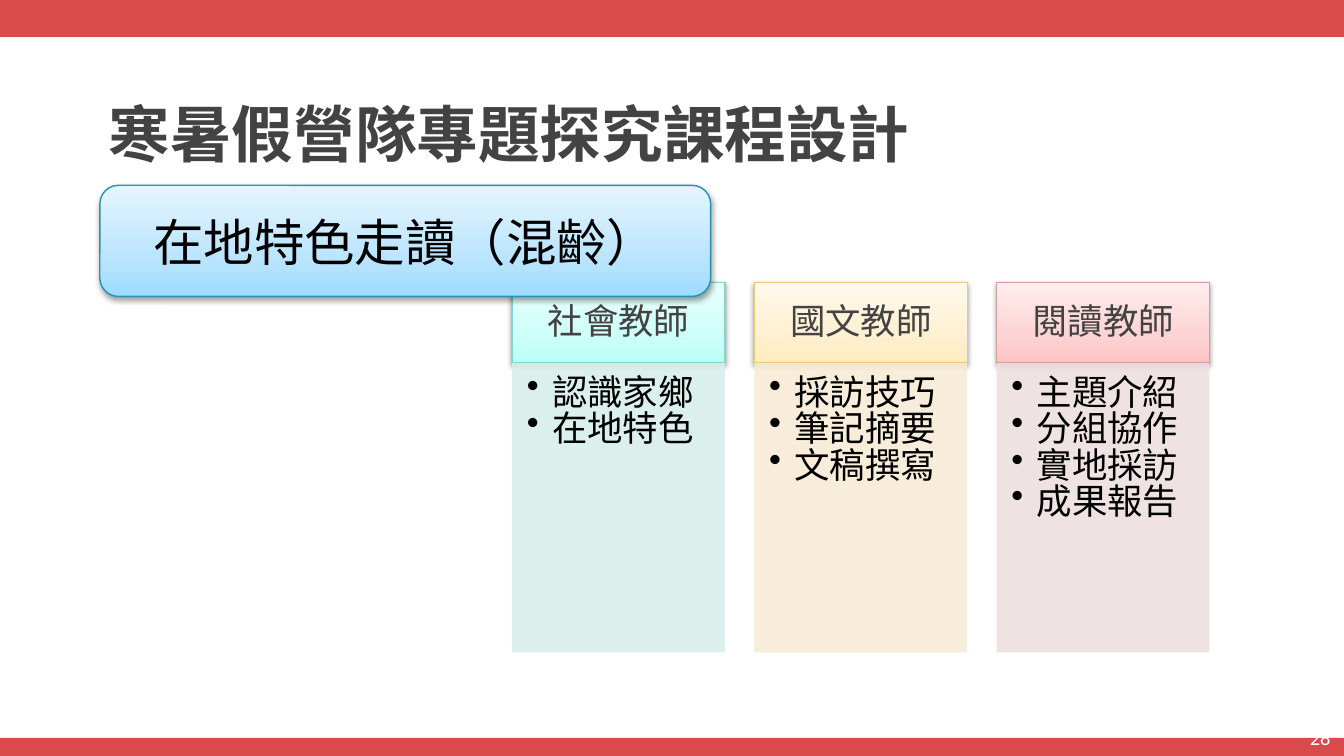
from dataclasses import dataclass

from lxml.etree import SubElement
from pptx import Presentation
from pptx.dml.color import RGBColor
from pptx.enum.shapes import MSO_SHAPE
from pptx.enum.text import MSO_ANCHOR, MSO_AUTO_SIZE, PP_ALIGN
from pptx.oxml.ns import qn
from pptx.util import Pt


@dataclass(frozen=True)
class Theme:
    bar: str = "DA4A4A"
    heading: str = "434343"
    ink: str = "000000"
    paper: str = "FFFFFF"
    topic_line: str = "2693B6"
    topic_stops: tuple = ("9EDBFF", "BBE5FE", "E5F5FF")
    column_font: str = "Noto Sans CJK SC"
    topic_font: str = "Noto Sans CJK TC"
    number_font: str = "Calibri"
    title_size: float = 33
    topic_size: float = 27
    column_size: float = 19
    number_size: float = 11


@dataclass(frozen=True)
class Column:
    teacher: str
    lessons: tuple
    stops: tuple
    line: str
    panel: str


COLUMNS = (
    Column("社會教師", ("認識家鄉", "在地特色"),
           ("B9FFF6", "CDFFF8", "ECFFFC"), "80D5CC", "D8EFEC"),
    Column("國文教師", ("採訪技巧", "筆記摘要", "文稿撰寫"),
           ("FFEBBF", "FFF0D1", "FFF9ED"), "E9CB74", "F7ECD6"),
    Column("閱讀教師", ("主題介紹", "分組協作", "實地採訪", "成果報告"),
           ("FDC2C2", "FDD4D4", "FFEDED"), "D19E9E", "EEDFDF"),
)


def add_element(parent, tag, **attributes):
    values = {name: str(value) for name, value in attributes.items()}
    return SubElement(parent, qn(tag), values)


def write_text(shape, lines, *, font, size, color, bold=False, align=PP_ALIGN.LEFT,
               anchor=MSO_ANCHOR.TOP, insets=(7.2, 3.6, 7.2, 3.6),
               spacing=1.0, after=0, bullet_indent=0):
    frame = shape.text_frame
    frame.word_wrap = True
    frame.auto_size = MSO_AUTO_SIZE.NONE
    frame.vertical_anchor = anchor
    frame.margin_left, frame.margin_top, frame.margin_right, frame.margin_bottom = map(Pt, insets)
    frame.text = "\n".join(lines)
    for paragraph in frame.paragraphs:
        paragraph.alignment = align
        paragraph.line_spacing = spacing
        paragraph.space_before = Pt(0)
        paragraph.space_after = Pt(after)
        if bullet_indent:
            paragraph.level = 1
            properties = paragraph._p.get_or_add_pPr()
            properties.set("marL", str(Pt(bullet_indent)))
            properties.set("indent", str(-Pt(bullet_indent)))
            add_element(properties, "a:buChar", char="•")
        for run in paragraph.runs:
            run.font.size = Pt(size)
            run.font.bold = bold
            run.font.color.rgb = RGBColor.from_string(color)
            run.font.name = font
            add_element(run._r.get_or_add_rPr(), "a:ea", typeface=font)


class SlideBuilder:
    def __init__(self, presentation, theme):
        self.theme = theme
        self.slide = presentation.slides.add_slide(presentation.slide_layouts[5])

    def title(self, text, left, top, width, height):
        shape = self.slide.shapes.title
        shape.left, shape.top, shape.width, shape.height = map(Pt, (left, top, width, height))
        write_text(shape, [text], font=self.theme.column_font, size=self.theme.title_size,
                   color=self.theme.heading, bold=True, anchor=MSO_ANCHOR.MIDDLE,
                   insets=(5, 2.9, 5, 2.9), spacing=0.9)

    def block(self, left, top, width, height, color, opacity=100):
        shape = self.slide.shapes.add_shape(
            MSO_SHAPE.RECTANGLE, *map(Pt, (left, top, width, height)))
        shape.shadow.inherit = False
        shape.fill.solid()
        shape.fill.fore_color.rgb = RGBColor.from_string(color)
        if opacity < 100:
            for value in shape.element.spPr.iter(qn("a:srgbClr")):
                add_element(value, "a:alpha", val=opacity * 1000)
        shape.line.fill.background()
        return shape

    def gradient_card(self, kind, left, top, width, height, stops, line):
        shape = self.slide.shapes.add_shape(kind, *map(Pt, (left, top, width, height)))
        shape.fill.gradient()
        shape.fill.gradient_angle = 90
        stop_list = shape.element.spPr.find(".//" + qn("a:gsLst"))
        stop_list.clear()
        for position, color in zip((0, 35, 100), stops):
            stop = add_element(stop_list, "a:gs", pos=position * 1000)
            add_element(stop, "a:srgbClr", val=color)
        shape.line.color.rgb = RGBColor.from_string(line)
        shape.line.width = Pt(0.75)
        shape.shadow.inherit = False
        effects = shape.element.spPr.find(qn("a:effectLst"))
        shadow = add_element(effects, "a:outerShdw", blurRad=Pt(3.1), dist=Pt(1.6),
                             dir=90 * 60000, rotWithShape=0)
        shade = add_element(shadow, "a:srgbClr", val=self.theme.ink)
        add_element(shade, "a:alpha", val=38000)
        return shape

    def column(self, column, left, top, width, header_height, panel_height):
        theme = self.theme
        header = self.gradient_card(MSO_SHAPE.RECTANGLE, left, top, width, header_height,
                                    column.stops, column.line)
        write_text(header, [column.teacher], font=theme.column_font, size=theme.column_size,
                   color=theme.heading, align=PP_ALIGN.CENTER, anchor=MSO_ANCHOR.MIDDLE,
                   insets=(10.8, 5.8, 10.8, 5.8), spacing=0.9)
        panel = self.block(left, top + header_height, width, panel_height, column.panel, 90)
        write_text(panel, column.lessons, font=theme.column_font, size=theme.column_size,
                   color=theme.ink, insets=(7.9, 7.9, 10.8, 12.2), spacing=0.8,
                   after=1.4, bullet_indent=13.5)

    def topic(self, text, left, top, width, height):
        card = self.gradient_card(MSO_SHAPE.ROUNDED_RECTANGLE, left, top, width, height,
                                  self.theme.topic_stops, self.theme.topic_line)
        write_text(card, [text], font=self.theme.topic_font, size=self.theme.topic_size,
                   color=self.theme.ink, align=PP_ALIGN.CENTER, anchor=MSO_ANCHOR.MIDDLE)

    def page_number(self, text, left, top, width, height):
        box = self.slide.shapes.add_textbox(*map(Pt, (left, top, width, height)))
        write_text(box, [text], font=self.theme.number_font, size=self.theme.number_size,
                   color=self.theme.paper, align=PP_ALIGN.RIGHT, insets=(7.2,) * 4)


def main():
    presentation = Presentation()
    presentation.slide_width, presentation.slide_height = Pt(720), Pt(405)
    theme = Theme()
    builder = SlideBuilder(presentation, theme)
    builder.block(0, 395.3, 720, 10.8, theme.bar)
    builder.block(0, -1.7, 720, 21.5, theme.bar)
    for index, column in enumerate(COLUMNS):
        builder.column(column, 274.4 + index * 129.8, 151.3, 114, 43.2, 155)
    builder.title("寒暑假營隊專題探究課程設計", 53.3, 38.2, 548.6, 71.3)
    builder.topic("在地特色走讀（混齡）", 53.5, 99.3, 327.2, 59.5)
    builder.page_number("28", 676.8, 381, 43.2, 24)
    presentation.save("out.pptx")


if __name__ == "__main__":
    main()
